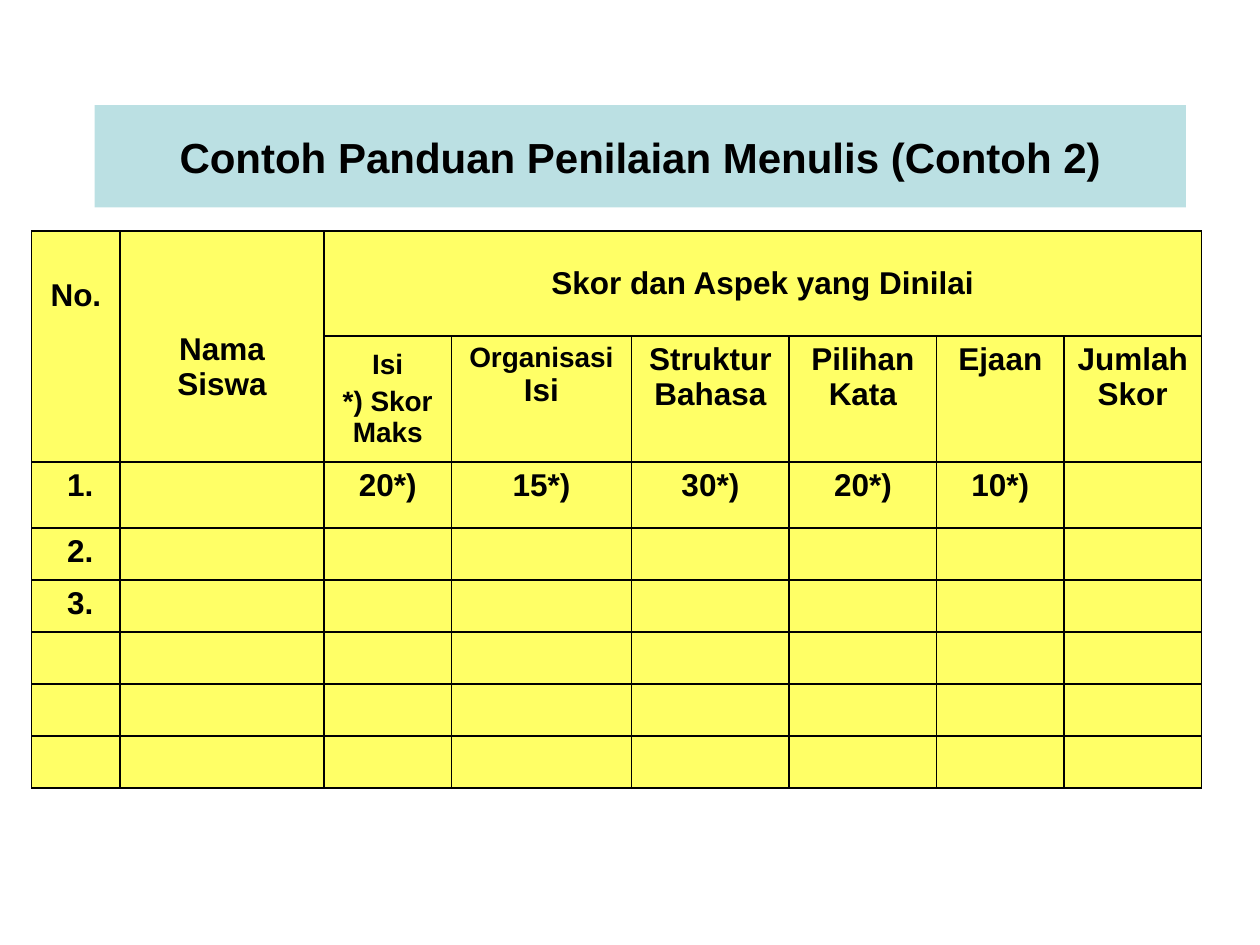
from lxml import etree
from pptx import Presentation
from pptx.dml.color import RGBColor
from pptx.enum.shapes import MSO_SHAPE
from pptx.enum.text import MSO_ANCHOR, PP_ALIGN
from pptx.oxml.ns import qn
from pptx.util import Cm, Pt

RECTANGLE = MSO_SHAPE.RECTANGLE
MIDDLE = MSO_ANCHOR.MIDDLE
CENTER = PP_ALIGN.CENTER
FONT = "Arial"
COLORS = {"title": "BBE0E3", "cell": "FFFF66", "ink": "000000"}

COLUMN_WIDTHS = [1.78, 4.11, 2.57, 3.63, 3.18, 2.97, 2.57, 2.77]
ROW_HEIGHTS = [2.11, 2.54, 1.33] + [1.05] * 5
GROUPS = [
    ["No.", "Nama Siswa", "Skor dan Aspek yang Dinilai"],
    ["", "", "Isi\n*) Skor Maks", "", "Struktur Bahasa", "Pilihan Kata", "Ejaan", "Jumlah Skor"],
    ["1.", "", "20*)", "15*)", "30*)", "20*)", "10*)"],
    ["2."],
    ["3."],
]
MERGES = [((0, 0), (1, 0)), ((0, 1), (1, 1)), ((0, 2), (0, 7))]


def color(name):
    """Return the named colour."""
    return RGBColor.from_string(COLORS[name])


def format_text(frame, size):
    """Centre every paragraph and set bold runs of one size."""
    for index, para in enumerate(frame.paragraphs):
        para.alignment = CENTER
        if index:
            para.space_before = Pt(size * 0.2)
        for span in para.runs:
            span.font.name = FONT
            span.font.size = Pt(size)
            span.font.bold = True
            span.font.color.rgb = color("ink")


def add_borders(cell):
    """Draw a one-point line on each side of a cell."""
    properties = cell._tc.get_or_add_tcPr()
    for side in ("a:lnL", "a:lnR", "a:lnT", "a:lnB"):
        line = etree.SubElement(properties, qn(side), w=str(Pt(1)))
        fill = etree.SubElement(line, qn("a:solidFill"))
        etree.SubElement(fill, qn("a:srgbClr"), val=COLORS["ink"])


def add_title(page, left, top, width, height):
    """Place the title band."""
    box = page.shapes.add_shape(RECTANGLE, left, top, width, height)
    box.shadow.inherit = False
    box.fill.solid()
    box.fill.fore_color.rgb = color("title")
    box.line.fill.background()
    box.text_frame.word_wrap = True
    box.text_frame.vertical_anchor = MIDDLE
    box.text_frame.text = "Contoh Panduan Penilaian Menulis (Contoh 2)"
    format_text(box.text_frame, 24)


def add_score_table(page, left, top):
    """Place the scoring table with its merged header."""
    frame = page.shapes.add_table(
        len(ROW_HEIGHTS), len(COLUMN_WIDTHS), left, top,
        Cm(sum(COLUMN_WIDTHS)), Cm(sum(ROW_HEIGHTS)))
    table = frame.table
    table.first_row = table.horz_banding = False
    for column, width in zip(table.columns, COLUMN_WIDTHS):
        column.width = Cm(width)
    for row, height in zip(table.rows, ROW_HEIGHTS):
        row.height = Cm(height)
    for cell in table.iter_cells():
        add_borders(cell)
        cell.fill.solid()
        cell.fill.fore_color.rgb = color("cell")
    for start, end in MERGES:
        table.cell(*start).merge(table.cell(*end))

    for row, texts in enumerate(GROUPS):
        for column, text in enumerate(texts):
            if text:
                frame = table.cell(row, column).text_frame
                frame.text = text
                format_text(frame, 16 if (row, column) == (1, 2) else 18)

    organisation = table.cell(1, 3).text_frame
    for text in ("Organisasi ", "Isi"):
        organisation.paragraphs[0].add_run().text = text
    format_text(organisation, 18)
    organisation.paragraphs[0].runs[0].font.size = Pt(16)

    for row, column in ((0, 1), (0, 2), (1, 2)):
        table.cell(row, column).vertical_anchor = MIDDLE
    for column in (0, 1):
        table.cell(0, column).margin_top = Cm(0.95)
    for row in (2, 3, 4):
        table.cell(row, 0).margin_left = Cm(0.43)


def main():
    """Build and save the slide."""
    deck = Presentation()
    deck.slide_width, deck.slide_height = Cm(25.4), Cm(19.05)
    page = deck.slides.add_slide(deck.slide_layouts[6])
    add_title(page, Cm(1.91), Cm(2.12), Cm(22), Cm(2.06))
    add_score_table(page, Cm(0.64), Cm(4.66))
    deck.save("out.pptx")


if __name__ == "__main__":
    main()
